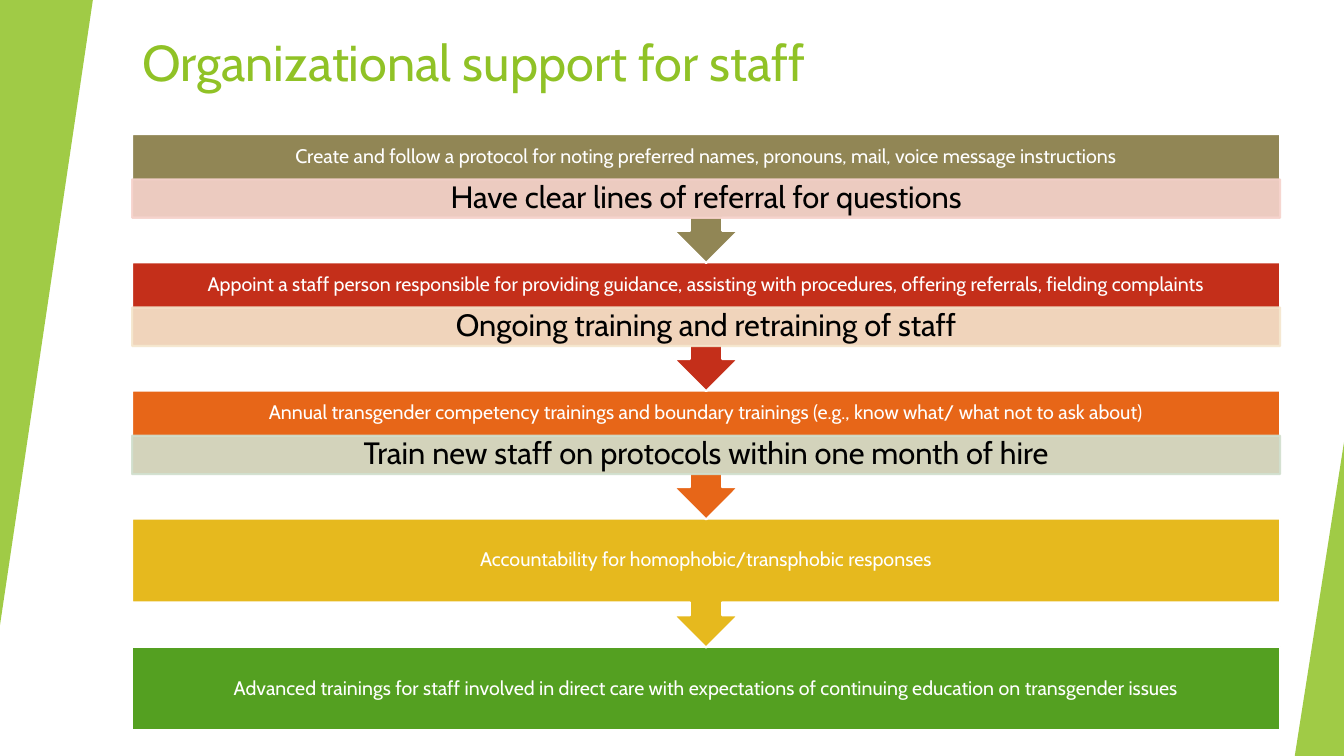
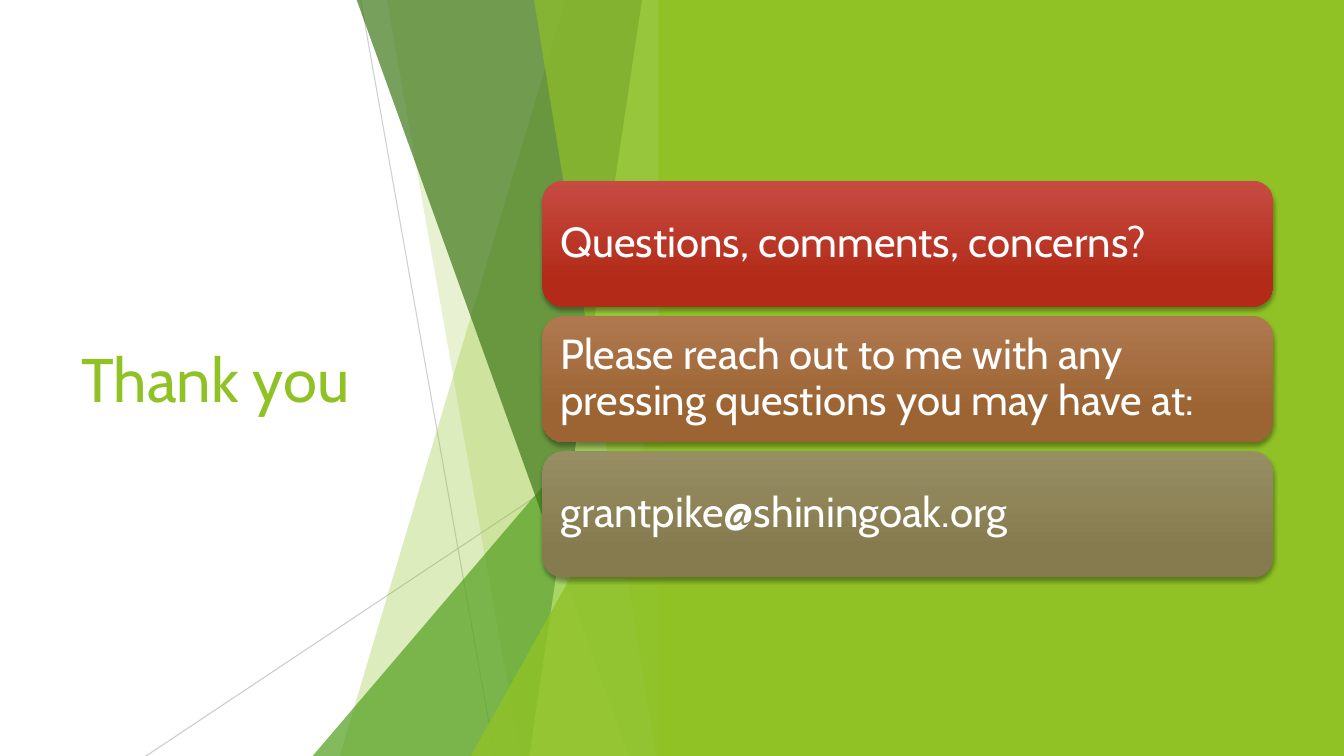
from lxml import etree
from pptx import Presentation
from pptx.dml.color import RGBColor
from pptx.enum import shapes, text
from pptx.oxml.ns import qn
from pptx.util import Cm, Pt

FONT = "Cabin"
WHITE = RGBColor(0xFF, 0xFF, 0xFF)
BLACK = RGBColor(0x00, 0x00, 0x00)
GRAY = RGBColor(0xBF, 0xBF, 0xBF)
LIME = RGBColor(0x90, 0xC2, 0x26)
PALE_LIME = RGBColor(0xC0, 0xE4, 0x74)
GREEN = RGBColor(0x54, 0xA0, 0x21)
DARK_GREEN = RGBColor(0x3F, 0x78, 0x19)
KHAKI = RGBColor(0x91, 0x86, 0x55)
RED = RGBColor(0xC4, 0x2F, 0x1A)
ORANGE = RGBColor(0xE7, 0x66, 0x18)
YELLOW = RGBColor(0xE6, 0xB9, 0x1E)
PALE_RED = RGBColor(0xF6, 0xD3, 0xCC)
PALE_ORANGE = RGBColor(0xF5, 0xE6, 0xCD)
PALE_GREEN = RGBColor(0xD1, 0xDF, 0xCD)
CARD_RED = (RGBColor(0xC7, 0x4B, 0x42), RGBColor(0xB3, 0x2B, 0x18))
CARD_BROWN = (RGBColor(0xAF, 0x78, 0x4F), RGBColor(0x9C, 0x64, 0x32))
CARD_KHAKI = (RGBColor(0x98, 0x8E, 0x64), RGBColor(0x85, 0x7B, 0x4E))

SLIDE_W, SLIDE_H = 33.87, 19.05
FACET_RIGHT = 16.92
STEP_LEFT, STEP_TOP, STEP_W = 3.33, 3.38, 28.93
STEP_PITCH, STEP_H, BOX_H = 3.23, 3.25, 2.11
STRIP_TOP, STRIP_H = 1.14, 0.97
CARD_LEFT, CARD_TOP, CARD_W, CARD_H, CARD_PITCH = 13.67, 4.55, 18.42, 3.18, 3.41

STEPS = [
    ("Create and follow a protocol for noting preferred names, pronouns, mail, voice message instructions",
     KHAKI, "Have clear lines of referral for questions", PALE_RED),
    ("Appoint a staff person responsible for providing guidance, assisting with procedures, "
     "offering referrals, fielding complaints",
     RED, "Ongoing training and retraining of staff", PALE_ORANGE),
    ("Annual transgender competency trainings and boundary trainings "
     "(e.g., know what/ what not to ask about)",
     ORANGE, "Train new staff on protocols within one month of hire", PALE_GREEN),
    ("Accountability for homophobic/transphobic responses", YELLOW, None, None),
    ("Advanced trainings for staff involved in direct care with expectations of "
     "continuing education on transgender issues", GREEN, None, None),
]
CARDS = [
    ("Questions, comments, concerns?", CARD_RED),
    ("Please reach out to me with any pressing questions you may have at:", CARD_BROWN),
    ("grantpike@shiningoak.org", CARD_KHAKI),
]


def set_alpha(fill_parent, percent):
    clr = fill_parent.find(qn("a:solidFill"))[0]
    etree.SubElement(clr, qn("a:alpha"), val=str(percent * 1000))


def paint(sp, color, alpha=100, line=None):
    sp.shadow.inherit = False
    sp.fill.solid()
    sp.fill.fore_color.rgb = color
    if alpha < 100:
        set_alpha(sp._element.spPr, alpha)
    if line is None:
        sp.line.fill.background()
    else:
        sp.line.color.rgb = line
        sp.line.width = Pt(1.5)


def add_preset(s, kind, left, top, width, height):
    return s.shapes.add_shape(kind, Cm(left), Cm(top), Cm(width), Cm(height))


def write(sp, words, size, color, align, insets=None, anchor=text.MSO_ANCHOR.MIDDLE, spacing=0.9):
    tf = sp.text_frame
    tf.text = words
    tf.word_wrap = True
    tf.auto_size = text.MSO_AUTO_SIZE.NONE
    tf.vertical_anchor = anchor
    if insets:
        tf.margin_left, tf.margin_top, tf.margin_right, tf.margin_bottom = map(Cm, insets)
    p = tf.paragraphs[0]
    p.alignment = align
    p.line_spacing = spacing
    r = p.runs[0]
    r.font.name = FONT
    r.font.size = Pt(size)
    r.font.color.rgb = color


def add_slide(prs, title, size, left, top, width, height, anchor):
    s = prs.slides.add_slide(prs.slide_layouts[5])
    sp = s.shapes.title
    sp.left, sp.top, sp.width, sp.height = map(Cm, (left, top, width, height))
    write(sp, title, size, LIME, text.PP_ALIGN.LEFT, anchor=anchor, spacing=1.0)
    return s


def add_triangle(s, left, top, width, height, color, alpha, rotation=0):
    sp = add_preset(s, shapes.MSO_SHAPE.ISOSCELES_TRIANGLE, left, top, width, height)
    sp.adjustments[0] = 1
    sp.rotation = rotation
    paint(sp, color, alpha)


def add_facet(s, top_x, bottom_x, color, alpha):
    fb = s.shapes.build_freeform(Cm(top_x), 0)
    corners = [(FACET_RIGHT, 0), (FACET_RIGHT, SLIDE_H), (bottom_x, SLIDE_H)]
    fb.add_line_segments([(Cm(x), Cm(y)) for x, y in corners], close=True)
    paint(fb.convert_to_shape(), color, alpha)


def add_corner_triangle(s, width, height, color, alpha, right=FACET_RIGHT):
    add_triangle(s, right - width, SLIDE_H - height, width, height, color, alpha)


def add_thin_line(s, x1, y1, x2, y2, alpha):
    c = s.shapes.add_connector(shapes.MSO_CONNECTOR.STRAIGHT, Cm(x1), Cm(y1), Cm(x2), Cm(y2))
    c.line.color.rgb = GRAY
    c.line.width = Pt(0.75)
    spPr = c._element.spPr
    set_alpha(spPr.find(qn("a:ln")), alpha)
    etree.SubElement(spPr, qn("a:effectLst"))


def add_facets(s):
    add_thin_line(s, 9.09, 0, 12.47, SLIDE_H, 75)
    add_thin_line(s, FACET_RIGHT, 10.24, 3.68, SLIDE_H, 80)
    add_facet(s, 14.25, 8.56, LIME, 30)
    add_facet(s, 9.75, 13.11, LIME, 20)
    add_corner_triangle(s, 9.04, 10.59, GREEN, 72)
    add_facet(s, 8.99, 15.85, DARK_GREEN, 70)
    add_facet(s, 16.18, 13.34, PALE_LIME, 70)
    add_facet(s, 13.46, 16.54, LIME, 65)
    add_corner_triangle(s, 5.05, 9.07, LIME, 80)


def add_step(s, i, words, color, strip_words, strip_color):
    top = STEP_TOP + i * STEP_PITCH
    if i == len(STEPS) - 1:
        sp = add_preset(s, shapes.MSO_SHAPE.RECTANGLE, STEP_LEFT, top, STEP_W, BOX_H)
    else:
        sp = add_preset(s, shapes.MSO_SHAPE.DOWN_ARROW_CALLOUT, STEP_LEFT, top, STEP_W, STEP_H)
        for n, value in enumerate((0.25, 0.25, 0.25, BOX_H / STEP_H)):
            sp.adjustments[n] = value
    paint(sp, color, line=WHITE)
    bottom = 0.28 + (STRIP_H if strip_words else 0)
    write(sp, words, 14, WHITE, text.PP_ALIGN.CENTER, (0.28, 0.28, 0.28, bottom))
    if strip_words:
        strip = add_preset(s, shapes.MSO_SHAPE.RECTANGLE, STEP_LEFT, top + STRIP_TOP, STEP_W, STRIP_H)
        paint(strip, strip_color, 90, line=strip_color)
        set_alpha(strip._element.spPr.find(qn("a:ln")), 90)
        write(strip, strip_words, 22, BLACK, text.PP_ALIGN.CENTER, (0.43, 0.08, 0.43, 0.08))


def add_card(s, i, words, colors):
    sp = add_preset(s, shapes.MSO_SHAPE.ROUNDED_RECTANGLE,
                    CARD_LEFT, CARD_TOP + i * CARD_PITCH, CARD_W, CARD_H)
    sp.fill.gradient()
    sp.fill.gradient_angle = 270
    for stop, color, position in zip(sp.fill.gradient_stops, colors, (0, 0.78)):
        stop.color.rgb = color
        stop.position = position
    sp.line.fill.background()
    sp.shadow.inherit = False
    effects = sp._element.spPr.find(qn("a:effectLst"))
    shadow = etree.SubElement(effects, qn("a:outerShdw"), blurRad=str(Pt(3)), dist=str(Pt(2)),
                              dir="5400000", algn="ctr", rotWithShape="0")
    clr = etree.SubElement(shadow, qn("a:srgbClr"), val=str(BLACK))
    etree.SubElement(clr, qn("a:alpha"), val="35000")
    write(sp, words, 30, WHITE, text.PP_ALIGN.LEFT, (0.3, 0.3, 0.3, 0.3))


def build_support_slide(prs):
    s = add_slide(prs, "Organizational support for staff", 36, 3.33, 0.66, 18.67, 2.06,
                  text.MSO_ANCHOR.TOP)
    add_triangle(s, 0, 0, 2.34, 15.75, LIME, 85, rotation=180)
    add_corner_triangle(s, 1.24, 7.9, LIME, 85, right=SLIDE_W)
    for i, step in reversed(list(enumerate(STEPS))):
        add_step(s, i, *step)


def build_thanks_slide(prs):
    s = add_slide(prs, "Thank you", 44, 1.8, 3.84, 9.86, 11.38, text.MSO_ANCHOR.MIDDLE)
    add_facets(s)
    panel_left = 16.6
    panel = add_preset(s, shapes.MSO_SHAPE.RECTANGLE, panel_left, 0, SLIDE_W - panel_left, SLIDE_H)
    paint(panel, LIME)
    for i, card in enumerate(CARDS):
        add_card(s, i, *card)


def main():
    prs = Presentation()
    prs.slide_width, prs.slide_height = Cm(SLIDE_W), Cm(SLIDE_H)
    build_support_slide(prs)
    build_thanks_slide(prs)
    prs.save("out.pptx")


if __name__ == "__main__":
    main()
